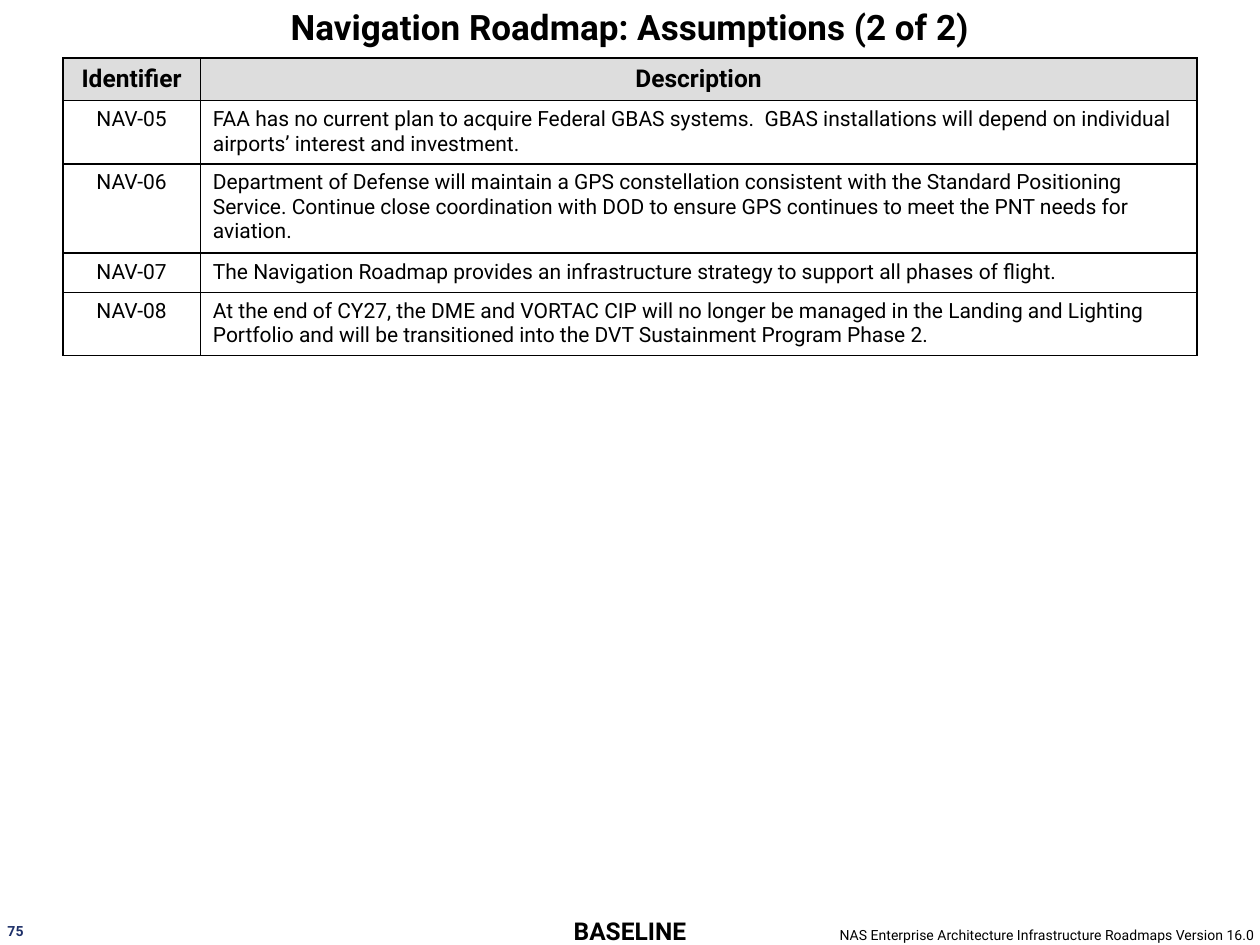
from lxml import etree
from pptx import Presentation
from pptx import util as u
from pptx.dml import color
from pptx.enum import text
from pptx.oxml import ns

COLORS = {"black": "000000", "header": "DDDDDD", "navy": "1D2F68"}
FONT = "Roboto"
ALIGN = text.PP_ALIGN
ANCHOR = text.MSO_ANCHOR

ASSUMPTIONS = [
    ("NAV-05", "FAA has no current plan to acquire Federal GBAS systems.  GBAS installations "
               "will depend on individual airports’ interest and investment."),
    ("NAV-06", "Department of Defense will maintain a GPS constellation consistent with the "
               "Standard Positioning Service. Continue close coordination with DOD to ensure "
               "GPS continues to meet the PNT needs for aviation."),
    ("NAV-07", "The Navigation Roadmap provides an infrastructure strategy to support all "
               "phases of flight."),
    ("NAV-08", "At the end of CY27, the DME and VORTAC CIP will no longer be managed in the "
               "Landing and Lighting Portfolio and will be transitioned into the DVT "
               "Sustainment Program Phase 2."),
]
COLUMN_WIDTHS = [1.09, 7.91]
ROW_HEIGHTS = [0.34, 0.5, 0.71, 0.31, 0.5]


def set_attributes(target, values):
    for name, value in values.items():
        setattr(target, name, value)


def write(frame, content, size, bold=False, hue="black", **paragraph_format):
    paragraph = frame.paragraphs[0]
    set_attributes(paragraph, paragraph_format)
    run = paragraph.add_run()
    run.text = content
    set_attributes(run.font, {"name": FONT, "size": u.Pt(size), "bold": bold})
    run.font.color.rgb = color.RGBColor.from_string(COLORS[hue])


def add_text(slide, box, content, size, align, anchor=ANCHOR.TOP, wrap=True, **font):
    frame = slide.shapes.add_textbox(*map(u.Inches, box)).text_frame
    margins = {f"margin_{side}": 0 for side in ("left", "top", "right", "bottom")}
    set_attributes(frame, {**margins, "word_wrap": wrap, "vertical_anchor": anchor})
    write(frame, content, size, alignment=align, **font)


def add_borders(cell):
    properties = cell._tc.get_or_add_tcPr()
    for side in ("lnL", "lnR", "lnT", "lnB"):
        line = etree.SubElement(properties, ns.qn(f"a:{side}"), w=str(u.Pt(1)))
        fill = etree.SubElement(line, ns.qn("a:solidFill"))
        etree.SubElement(fill, ns.qn("a:srgbClr"), val=COLORS["black"])


def add_title(slide, box):
    add_text(slide, box, "Navigation Roadmap: Assumptions (2 of 2)", 20,
             ALIGN.CENTER, ANCHOR.MIDDLE, bold=True)


def add_assumptions(slide, box):
    rows = [("Identifier", "Description"), *ASSUMPTIONS]
    table = slide.shapes.add_table(len(rows), 2, *map(u.Inches, box)).table
    table.horz_banding = False
    for column, width in zip(table.columns, COLUMN_WIDTHS):
        column.width = u.Inches(width)
    for row, height, values in zip(table.rows, ROW_HEIGHTS, rows):
        row.height = u.Inches(height)
        header = values is rows[0]
        for index, (cell, value) in enumerate(zip(row.cells, values)):
            add_borders(cell)
            if header:
                cell.fill.solid()
                cell.fill.fore_color.rgb = color.RGBColor.from_string(COLORS["header"])
            else:
                cell.fill.background()
            description = index == 1 and not header
            write(cell.text_frame, value, 14 if header else 12, header,
                  alignment=ALIGN.LEFT if description else ALIGN.CENTER,
                  space_before=u.Pt(2 if description else 0))


def add_footer(slide, box):
    left, top, width, height = box
    add_text(slide, (left + 0.06, top + 0.05, 0.14, 0.13), "75", 8, ALIGN.LEFT,
             wrap=False, bold=True, hue="navy")
    add_text(slide, (left + (width - 1.55) / 2, top, 1.55, height), "BASELINE", 14,
             ALIGN.CENTER, ANCHOR.MIDDLE, bold=True)
    add_text(slide, (left + width - 3.72, top + 0.08, 3.68, 0.13),
             "NAS Enterprise Architecture Infrastructure Roadmaps Version 16.0", 8, ALIGN.RIGHT)


def main():
    presentation = Presentation()
    set_attributes(presentation, {"slide_width": u.Inches(10), "slide_height": u.Inches(7.5)})
    slide = presentation.slides.add_slide(presentation.slide_layouts[6])
    add_footer(slide, (0, 7.27, 10, 0.24))
    add_assumptions(slide, (0.5, 0.46, sum(COLUMN_WIDTHS), sum(ROW_HEIGHTS)))
    add_title(slide, (0, 0, 10, 0.42))
    presentation.save("out.pptx")


if __name__ == "__main__":
    main()
